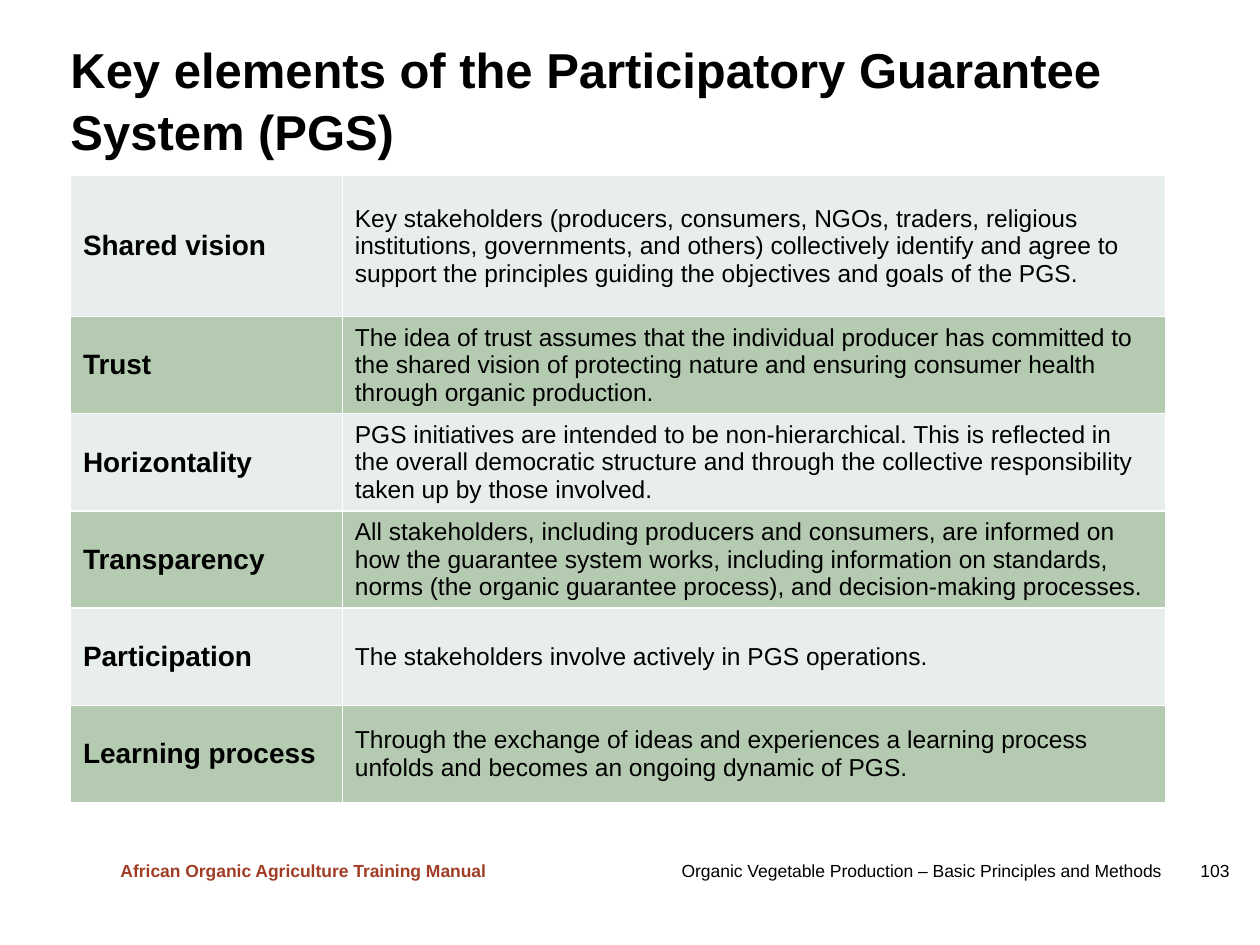
import dataclasses

import lxml.etree
import pptx
import pptx.dml.color
import pptx.enum.text
import pptx.oxml.ns
import pptx.util

Cm = pptx.util.Cm
Pt = pptx.util.Pt
MIDDLE = pptx.enum.text.MSO_ANCHOR.MIDDLE
LEFT = pptx.enum.text.PP_ALIGN.LEFT
FIXED = pptx.enum.text.MSO_AUTO_SIZE.NONE

FONT = "Arial"
BLACK = "000000"
WHITE = "FFFFFF"
RUST = "A23D25"
ROW_FILLS = ("E7EEED", "B5CBB1")

TABLE_LEFT, TABLE_TOP = 1.42, 3.54
COLUMN_WIDTHS = (5.48, 16.6)
FIRST_ROW_HEIGHT, ROW_HEIGHT = 2.84, 1.96


@dataclasses.dataclass
class Element:
    name: str
    description: str


@dataclasses.dataclass
class Footer:
    text: str
    left: float
    top: float
    width: float
    color: str
    bold: bool
    tab_stop: float = 0


ELEMENTS = (
    Element("Shared vision",
            "Key stakeholders (producers, consumers, NGOs, traders, religious institutions, "
            "governments, and others) collectively identify and agree to support the principles "
            "guiding the objectives and goals of the PGS."),
    Element("Trust",
            "The idea of trust assumes that the individual producer has committed to the shared "
            "vision of protecting nature and ensuring consumer health through organic production."),
    Element("Horizontality",
            "PGS initiatives are intended to be non-hierarchical. This is reflected in the overall "
            "democratic structure and through the collective responsibility taken up by those "
            "involved."),
    Element("Transparency",
            "All stakeholders, including producers and consumers, are informed on how the guarantee "
            "system works, including information on standards, norms (the organic guarantee "
            "process), and decision-making processes."),
    Element("Participation", "The stakeholders involve actively in PGS operations."),
    Element("Learning process",
            "Through the exchange of ideas and experiences a learning process unfolds and becomes "
            "an ongoing dynamic of PGS."),
)

FOOTERS = (
    Footer("African Organic Agriculture Training Manual", 2.18, 17.2, 9, RUST, True),
    Footer("Organic Vegetable Production – Basic Principles and Methods\t103",
           13.49, 17.2, 11.68, BLACK, False, tab_stop=10.46),
)


def rgb(color: str) -> pptx.dml.color.RGBColor:
    return pptx.dml.color.RGBColor.from_string(color)


def format_runs(frame, size: float, color: str, bold: bool) -> None:
    for para in frame.paragraphs:
        for span in para.runs:
            span.font.name = FONT
            span.font.size = Pt(size)
            span.font.bold = bold
            span.font.color.rgb = rgb(color)


def add_child(parent, tag: str, **attributes: str):
    return lxml.etree.SubElement(parent, pptx.oxml.ns.qn(tag), attributes)


def set_borders(cell, color: str, width: float) -> None:
    properties = cell._tc.get_or_add_tcPr()
    for position, side in enumerate(("a:lnL", "a:lnR", "a:lnT", "a:lnB")):
        line = add_child(properties, side, w=str(Pt(width)))
        add_child(add_child(line, "a:solidFill"), "a:srgbClr", val=color)
        properties.insert(position, line)


def fill_cell(cell, text: str, size: float, bold: bool, fill: str) -> None:
    cell.text_frame.text = text
    cell.vertical_anchor = MIDDLE
    cell.fill.solid()
    cell.fill.fore_color.rgb = rgb(fill)
    format_runs(cell.text_frame, size, BLACK, bold)
    set_borders(cell, WHITE, 1)


def set_title(page, text: str) -> None:
    title = page.shapes.title
    title.left, title.top, title.width, title.height = Cm(1.42), Cm(1.35), Cm(22.91), Cm(1.4)
    frame = title.text_frame
    frame.text = text
    frame.word_wrap = True
    frame.auto_size = FIXED
    frame.vertical_anchor = MIDDLE
    frame.margin_left = frame.margin_top = 0
    frame.margin_right, frame.margin_bottom = Cm(0.25), Cm(0.13)
    frame.paragraphs[0].alignment = LEFT
    frame.paragraphs[0].line_spacing = 1.05
    format_runs(frame, 28, BLACK, True)


def add_element_table(page) -> None:
    heights = [FIRST_ROW_HEIGHT] + [ROW_HEIGHT] * (len(ELEMENTS) - 1)
    table = page.shapes.add_table(
        len(ELEMENTS), len(COLUMN_WIDTHS), Cm(TABLE_LEFT), Cm(TABLE_TOP),
        Cm(sum(COLUMN_WIDTHS)), Cm(sum(heights))).table
    table.first_row = False
    for column, width in zip(table.columns, COLUMN_WIDTHS):
        column.width = Cm(width)
    for index, (element, height) in enumerate(zip(ELEMENTS, heights)):
        table.rows[index].height = Cm(height)
        fill = ROW_FILLS[index % len(ROW_FILLS)]
        fill_cell(table.cell(index, 0), element.name, 16, True, fill)
        fill_cell(table.cell(index, 1), element.description, 14, False, fill)


def add_footer(page, footer: Footer) -> None:
    box = page.shapes.add_textbox(Cm(footer.left), Cm(footer.top), Cm(footer.width), Cm(0.68))
    frame = box.text_frame
    frame.text = footer.text
    frame.word_wrap = True
    frame.vertical_anchor = MIDDLE
    if footer.tab_stop:
        tabs = add_child(frame.paragraphs[0]._p.get_or_add_pPr(), "a:tabLst")
        add_child(tabs, "a:tab", pos=str(Cm(footer.tab_stop)), algn="l")
    format_runs(frame, 10, footer.color, footer.bold)


def main() -> None:
    deck = pptx.Presentation()
    deck.slide_width, deck.slide_height = Cm(25.4), Cm(19.05)
    page = deck.slides.add_slide(deck.slide_layouts.get_by_name("Title Only"))
    set_title(page, "Key elements of the Participatory Guarantee System (PGS)")
    add_element_table(page)
    for footer in FOOTERS:
        add_footer(page, footer)
    deck.save("out.pptx")


if __name__ == "__main__":
    main()
